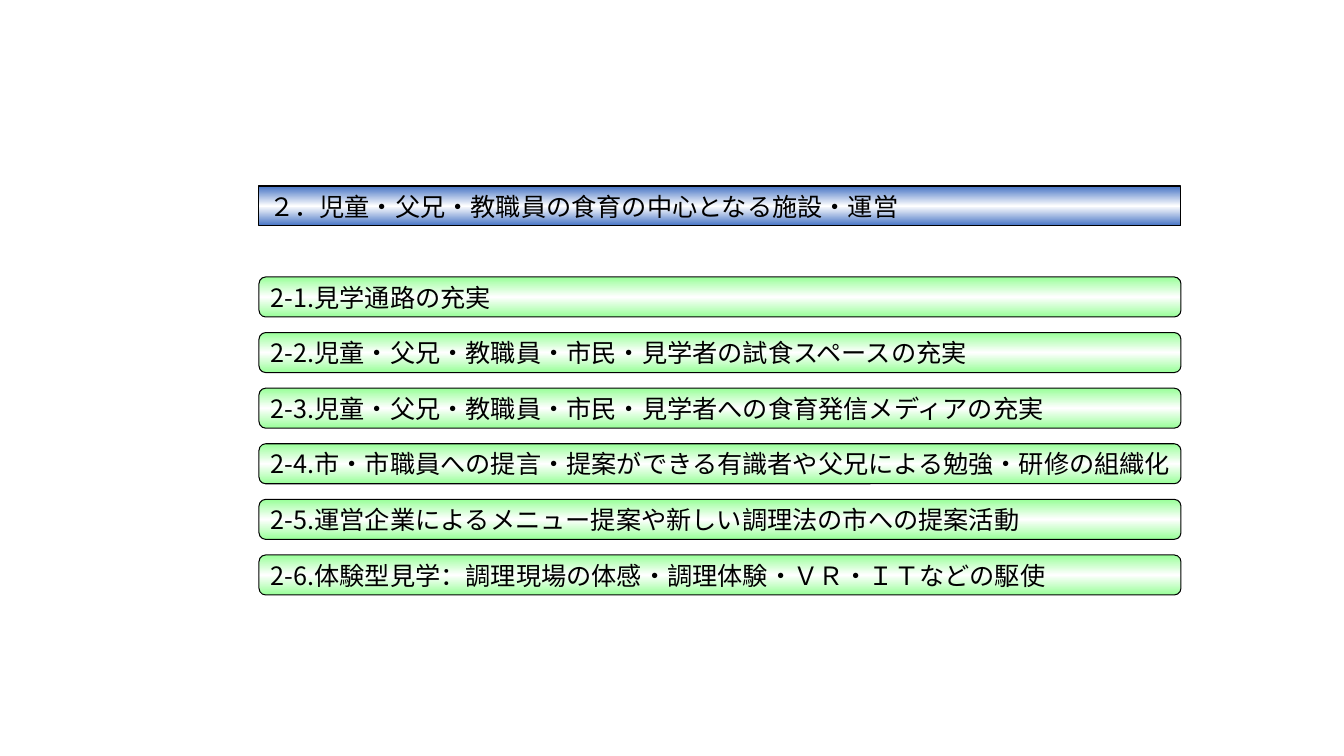
from copy import deepcopy

from lxml import etree
from pptx import Presentation
from pptx import util as u
from pptx.dml.color import RGBColor
from pptx.enum import shapes, text
from pptx.oxml.ns import qn

HEADING = "２．児童・父兄・教職員の食育の中心となる施設・運営"
ITEMS = [
    "2-1.見学通路の充実",
    "2-2.児童・父兄・教職員・市民・見学者の試食スペースの充実",
    "2-3.児童・父兄・教職員・市民・見学者への食育発信メディアの充実",
    "2-4.市・市職員への提言・提案ができる有識者や父兄による勉強・研修の組織化",
    "2-5.運営企業によるメニュー提案や新しい調理法の市への提案活動",
    "2-6.体験型見学：調理現場の体感・調理体験・ＶＲ・ＩＴなどの駆使",
]
FONT = "Noto Sans CJK JP"
BLUE, GREEN, WHITE, BLACK = "4472C4", "99FF99", "FFFFFF", "000000"
SLIDE_W, SLIDE_H = 1344, 756
LEFT, WIDTH, HEIGHT = 259, 922, 40
HEADING_TOP, FIRST_TOP, LAST_TOP = 186, 277, 555


def px(n):
    return u.Emu(round(n * 914400 / 100.8))


def color(value):
    return RGBColor.from_string(value)


def fill_bar(sp, edge):
    sp.fill.gradient()
    stops = sp.element.spPr.find(qn("a:gradFill")).find(qn("a:gsLst"))
    stops.append(deepcopy(stops[-1]))
    for stop, position, value in zip(sp.fill.gradient_stops, (0, 0.5, 1), (edge, WHITE, edge)):
        stop.position = position
        stop.color.rgb = color(value)
    sp.fill.gradient_angle = 270
    sp.line.color.rgb = color(BLACK)
    sp.line.width = u.Pt(0.75)
    sp.shadow.inherit = False


def write_label(sp, label):
    tf = sp.text_frame
    tf.text = label
    tf.word_wrap = False
    tf.auto_size = text.MSO_AUTO_SIZE.NONE
    tf.vertical_anchor = text.MSO_ANCHOR.MIDDLE
    p = tf.paragraphs[0]
    p.alignment = text.PP_ALIGN.LEFT
    p.font.size = u.Pt(18)
    p.font.color.rgb = color(BLACK)
    p.font.name = FONT
    etree.SubElement(p.font._element, qn("a:ea"), typeface=FONT)


prs = Presentation()
prs.slide_width, prs.slide_height = px(SLIDE_W), px(SLIDE_H)
s = prs.slides.add_slide(prs.slide_layouts[5])

pitch = (LAST_TOP - FIRST_TOP) / (len(ITEMS) - 1)
for i, item in enumerate(ITEMS):
    bar = s.shapes.add_shape(shapes.MSO_SHAPE.ROUNDED_RECTANGLE,
                             px(LEFT), px(FIRST_TOP + i * pitch), px(WIDTH), px(HEIGHT))
    fill_bar(bar, GREEN)
    write_label(bar, item)

title = s.shapes.title
title.left, title.top = px(LEFT), px(HEADING_TOP)
title.width, title.height = px(WIDTH), px(HEIGHT)
title.element.spPr.append(deepcopy(bar.element.spPr.find(qn("a:prstGeom"))))
fill_bar(title, BLUE)
write_label(title, HEADING)

prs.save("out.pptx")
